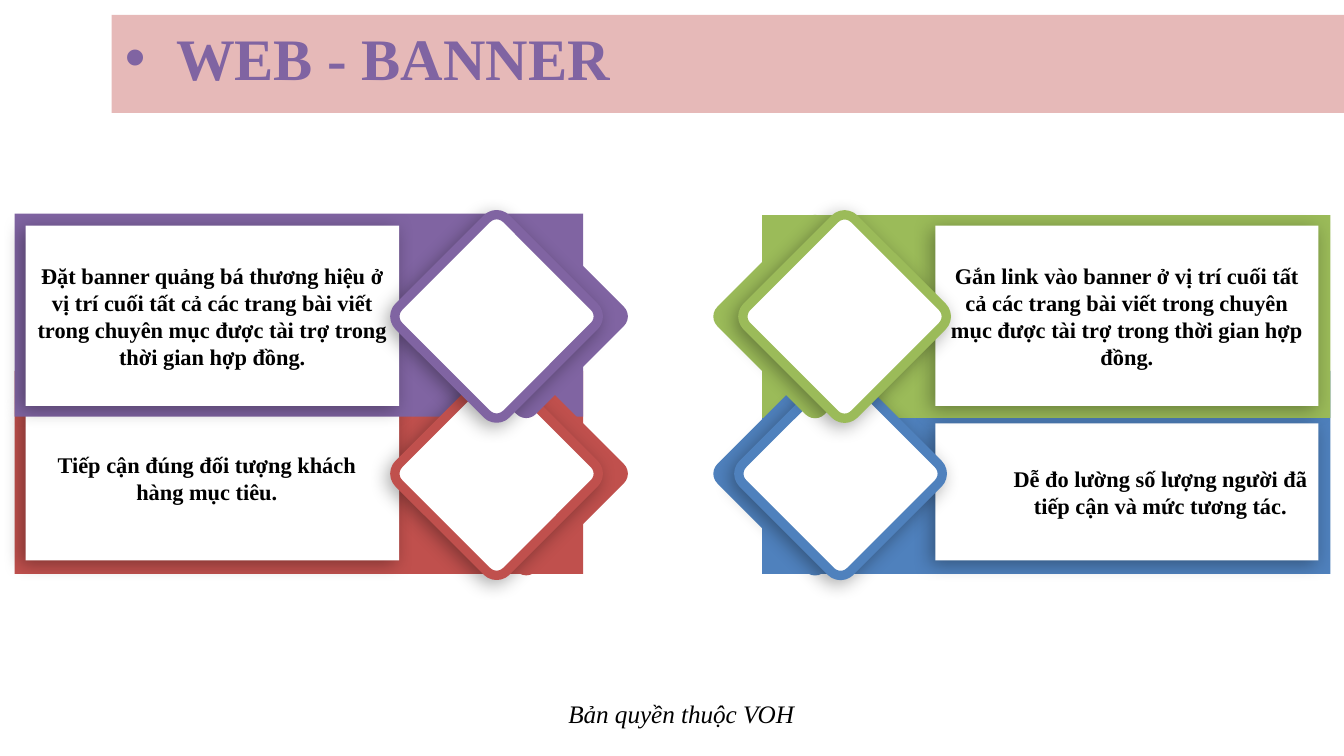
"""Build the web banner benefits slide."""
from lxml import etree
from pptx import Presentation
from pptx.dml.color import RGBColor
from pptx.enum.shapes import MSO_SHAPE
from pptx.enum.text import MSO_ANCHOR, MSO_AUTO_SIZE, PP_ALIGN
from pptx.oxml.ns import qn
from pptx.util import Inches, Pt

RED = RGBColor(0xC0, 0x50, 0x4D)
PURPLE = RGBColor(0x80, 0x64, 0xA2)
BLUE = RGBColor(0x4F, 0x81, 0xBD)
GREEN = RGBColor(0x9B, 0xBB, 0x59)
PINK = RGBColor(0xE6, 0xB9, 0xB8)
WHITE = RGBColor(0xFF, 0xFF, 0xFF)
BLACK = RGBColor(0, 0, 0)
FONT = "Times New Roman"

presentation = Presentation()
presentation.slide_width = Inches(10)
presentation.slide_height = Inches(10) * 9 // 16
slide = presentation.slides.add_slide(presentation.slide_layouts[1])
unused_title = slide.shapes.title.element
unused_title.getparent().remove(unused_title)


def add_panel(kind, box, fill, line=None, shadow=False):
    panel = slide.shapes.add_shape(kind, *[Inches(v) for v in box])
    panel.shadow.inherit = False
    panel.fill.solid()
    panel.fill.fore_color.rgb = fill
    if line is None:
        panel.line.fill.background()
    else:
        panel.line.color.rgb = line
        panel.line.width = Pt(5)
    if shadow:
        effects = panel.element.spPr.find(qn("a:effectLst"))
        outer = etree.SubElement(effects, qn("a:outerShdw"), blurRad=str(Pt(10)),
                                 dist=str(Pt(3)), dir="8100000", rotWithShape="0")
        tint = etree.SubElement(outer, qn("a:srgbClr"), val="000000")
        etree.SubElement(tint, qn("a:alpha"), val="33000")
    return panel


def add_text(paragraph, text, size, color=BLACK, bold=True, italic=False):
    run = paragraph.add_run()
    run.text = text
    run.font.name = FONT
    run.font.size = Pt(size)
    run.font.bold = bold
    run.font.italic = italic
    run.font.color.rgb = color


benefits = [
    (RED, 0.11, 2.76, (0.19, 3.02, 2.78, 1.15), 0, ""),
    (PURPLE, 0.11, 1.59, (0.19, 1.68, 2.78, 1.34), 0,
     "Đặt banner quảng bá thương hiệu ở vị trí cuối tất cả các trang bài viết "
     "trong chuyên mục được tài trợ trong thời gian hợp đồng."),
    (BLUE, 5.67, 2.76, (6.96, 3.15, 2.85, 1.02), 0.5,
     "Dễ đo lường số lượng người đã tiếp cận và mức tương tác."),
    (GREEN, 5.67, 1.6, (6.96, 1.68, 2.85, 1.34), 0,
     "Gắn link vào banner ở vị trí cuối tất cả các trang bài viết "
     "trong chuyên mục được tài trợ trong thời gian hợp đồng."),
]
for color, left, top, card_box, indent, benefit in benefits:
    add_panel(MSO_SHAPE.RECTANGLE, (left, top, 4.23, 1.51), color)
    card = add_panel(MSO_SHAPE.RECTANGLE, card_box, WHITE, shadow=True)
    if benefit:
        frame = card.text_frame
        frame.word_wrap = True
        frame.vertical_anchor = MSO_ANCHOR.MIDDLE
        frame.margin_left = frame.margin_right = Inches(0.07)
        frame.margin_top = frame.margin_bottom = Inches(0.04)
        paragraph = frame.paragraphs[0]
        paragraph.alignment = PP_ALIGN.CENTER
        if indent:
            paragraph.level = 1
            paragraph._p.get_or_add_pPr().set("marL", str(Inches(indent)))
        add_text(paragraph, benefit, 12)

diamonds = [
    (RED, 3.35, 3.13, 2.96, 45),
    (PURPLE, 3.35, 3.13, 1.79, 45),
    (BLUE, 5.5, 5.69, 2.96, 315),
    (GREEN, 5.5, 5.72, 1.79, 315),
]
for color, back_left, front_left, top, angle in diamonds:
    back = add_panel(MSO_SHAPE.ROUNDED_RECTANGLE, (back_left, top, 1.13, 1.13), color)
    front = add_panel(MSO_SHAPE.ROUNDED_RECTANGLE, (front_left, top, 1.13, 1.13),
                      WHITE, color, True)
    for diamond in (back, front):
        diamond.adjustments[0] = 0.09
        diamond.rotation = angle

heading = slide.placeholders[1]
heading.left, heading.top = Inches(0.83), Inches(0.11)
heading.width, heading.height = Inches(9.17), Inches(0.73)
heading.fill.solid()
heading.fill.fore_color.rgb = PINK
heading.text_frame.vertical_anchor = MSO_ANCHOR.TOP
paragraph = heading.text_frame.paragraphs[0]
properties = paragraph._p.get_or_add_pPr()
properties.set("marL", str(Inches(0.38)))
properties.set("indent", str(-Inches(0.38)))
etree.SubElement(properties, qn("a:buFont"), typeface="Arial")
etree.SubElement(properties, qn("a:buChar"), char="•")
paragraph.space_before = Pt(0)
add_text(paragraph, "WEB - BANNER", 31.5, PURPLE)

copyright_line = slide.shapes.add_textbox(
    Inches(4.13), Inches(5.15), Inches(1.91), Inches(0.33))
copyright_line.text_frame.word_wrap = False
copyright_line.text_frame.auto_size = MSO_AUTO_SIZE.SHAPE_TO_FIT_TEXT
add_text(copyright_line.text_frame.paragraphs[0], "Bản quyền thuộc VOH", 13.5,
         bold=False, italic=True)

audience = slide.shapes.add_textbox(
    Inches(0.19), Inches(3.31), Inches(2.7), Inches(0.81))
audience.text_frame.word_wrap = True
paragraph = audience.text_frame.paragraphs[0]
paragraph.alignment = PP_ALIGN.CENTER
add_text(paragraph, "Tiếp cận đúng đối tượng khách hàng mục tiêu.", 12)

presentation.save("out.pptx")
